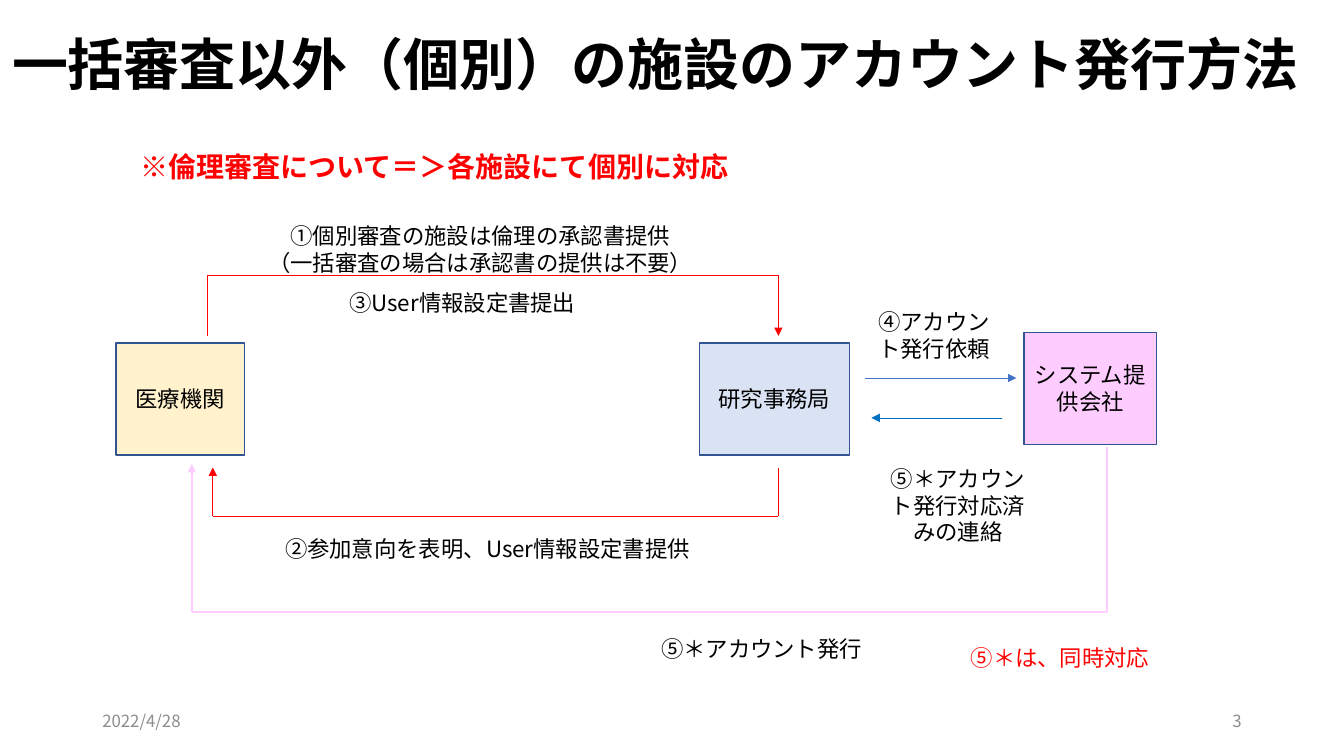
import pptx
import pptx.util
import pptx.dml.color
import pptx.enum.shapes
import pptx.enum.text
import pptx.oxml.ns
import lxml.etree

Pt = pptx.util.Pt
RGB = pptx.dml.color.RGBColor
ALIGN = pptx.enum.text.PP_ALIGN
ANCHOR = pptx.enum.text.MSO_ANCHOR
FONT = "Noto Sans CJK JP"
BLACK = RGB(0x00, 0x00, 0x00)
RED = RGB(0xFF, 0x00, 0x00)
GRAY = RGB(0x8C, 0x8C, 0x8C)
CREAM = RGB(0xFF, 0xF2, 0xCC)
PALE = RGB(0xDA, 0xE3, 0xF3)
PINK = RGB(0xFF, 0xCC, 0xFF)
NAVY = RGB(0x32, 0x54, 0x91)
BLUE = RGB(0x44, 0x72, 0xC4)
AZURE = RGB(0x00, 0x70, 0xC0)


def add_tag(parent, tag, **attrs):
    return lxml.etree.SubElement(parent, pptx.oxml.ns.qn(tag), **attrs)


def write(shape, text, size=16, color=BLACK, bold=False, align=ALIGN.CENTER,
          anchor=ANCHOR.TOP, wrap=True):
    frame = shape.text_frame
    frame.text = text
    frame.word_wrap = wrap
    frame.vertical_anchor = anchor
    for para in frame.paragraphs:
        para.alignment = align
        for run in para.runs:
            run.font.name = FONT
            run.font.size = Pt(size)
            run.font.bold = bold
            run.font.color.rgb = color
            add_tag(run.font._element, "a:ea", typeface=FONT)


def label(slide, box, text, **style):
    write(slide.shapes.add_textbox(*map(Pt, box)), text, **style)


def node(slide, box, text, fill):
    kind = pptx.enum.shapes.MSO_SHAPE.RECTANGLE
    shape = slide.shapes.add_shape(kind, *map(Pt, box))
    shape.shadow.inherit = False
    shape.fill.solid()
    shape.fill.fore_color.rgb = fill
    shape.line.color.rgb = NAVY
    shape.line.width = Pt(1)
    write(shape, text, anchor=ANCHOR.MIDDLE)


def route(slide, points, color, width=0.5):
    kind = pptx.enum.shapes.MSO_CONNECTOR.STRAIGHT
    for start, end in zip(points, points[1:]):
        line = slide.shapes.add_connector(kind, *map(Pt, start + end))
        line.line.color.rgb = color
        line.line.width = Pt(width)
        add_tag(line._element.spPr, "a:effectLst")
    add_tag(line.line._get_or_add_ln(), "a:tailEnd", type="triangle")


def bracket(slide, start, level, end, color, width=0.5):
    points = [start, (start[0], level), (end[0], level), end]
    route(slide, points, color, width)


def header(slide, box):
    x, y, w, h = box
    label(slide, (x, y, w, 55.5), "一括審査以外（個別）の施設のアカウント発行方法",
          size=40, bold=True, align=ALIGN.LEFT, wrap=False)
    label(slide, (x + 91.5, y + h - 31.5, 438.5, 31.5),
          "※倫理審査について＝＞各施設にて個別に対応",
          size=20, color=RED, bold=True, align=ALIGN.LEFT, wrap=False)


def exchange(slide, box):
    x, y, w, h = box
    top, right = y + 90, x + 473
    node(slide, (x, top, 91.5, 80), "医療機関", CREAM)
    node(slide, (x + w - 107.5, top, 107.5, 80), "研究事務局", PALE)
    bracket(slide, (x + 65, top - 5), y + 41.5, (right, top - 5), RED)
    bracket(slide, (right, top + 89), y + 213.5, (x + 69, top + 89), RED)
    label(slide, (x + 64, y, 392.5, 46),
          "①個別審査の施設は倫理の承認書提供\n（一括審査の場合は承認書の提供は不要）")
    label(slide, (x + 39.5, y + 48, 415.5, 26.5), "③User情報設定書提出")
    label(slide, (x + 57.5, y + h - 26.5, 415.5, 26.5),
          "②参加意向を表明、User情報設定書提供")


def request(slide, box):
    x, y, w, h = box
    node(slide, (x + w - 94.5, y + 21, 94.5, 80), "システム提供会社", PINK)
    route(slide, [(x + 4.5, y + 53.5), (x + 112.5, y + 53.5)], BLUE)
    route(slide, [(x + 102.5, y + 82), (x + 9, y + 82)], AZURE)
    label(slide, (x, y, 107.5, 46), "④アカウント発行依頼")
    label(slide, (x + 12.5, y + h - 65.5, 116.5, 65.5),
          "⑤＊アカウント発行対応済みの連絡")


def issue(slide, box):
    x, y, w, h = box
    bracket(slide, (x + w, y), y + 117.5, (x, y + 12), PINK, 1.5)
    label(slide, (x + 250, y + 130.5, 314, 26.5), "⑤＊アカウント発行")
    label(slide, (x + 482, y + h - 26.5, 276.5, 26.5),
          "⑤＊は、同時対応", color=RED)


def footer(slide, box):
    x, y, w, h = box
    style = dict(size=12, color=GRAY, anchor=ANCHOR.MIDDLE)
    label(slide, (x, y, 216, h), "2022/4/28", align=ALIGN.LEFT, **style)
    label(slide, (x + w - 216, y, 216, h), "3", align=ALIGN.RIGHT, **style)


def main():
    """Build the slide on how accounts are issued to sites reviewed one by one."""
    deck = pptx.Presentation()
    deck.slide_width, deck.slide_height = Pt(960), Pt(540)
    slide = deck.slides.add_slide(deck.slide_layouts[6])
    header(slide, (1.5, 17.5, 943, 117))
    exchange(slide, (83, 155, 524, 250))
    request(slide, (613.5, 216.5, 212.5, 177.5))
    issue(slide, (137, 319.5, 653.5, 163.5))
    footer(slide, (66, 500.5, 828, 28.5))
    deck.save("out.pptx")


if __name__ == "__main__":
    main()
